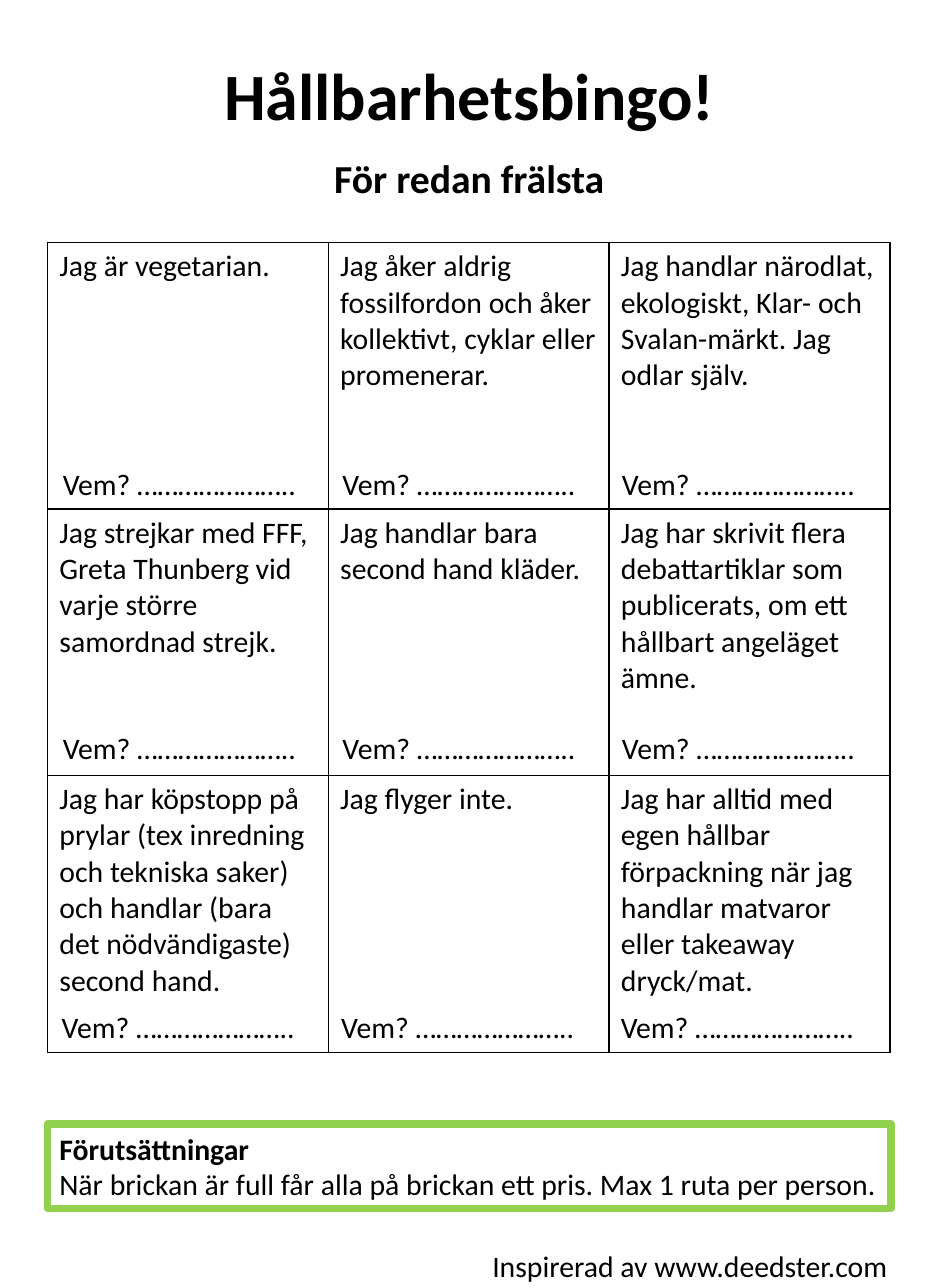
from dataclasses import dataclass

from lxml import etree
from pptx import Presentation
from pptx.dml.color import RGBColor
from pptx.enum.shapes import MSO_SHAPE
from pptx.enum.text import MSO_ANCHOR, MSO_AUTO_SIZE, PP_ALIGN
from pptx.oxml.ns import qn
from pptx.util import Pt

RECTANGLE = MSO_SHAPE.RECTANGLE
TOP, MIDDLE = MSO_ANCHOR.TOP, MSO_ANCHOR.MIDDLE
NO_FIT = MSO_AUTO_SIZE.NONE
LEFT, CENTER = PP_ALIGN.LEFT, PP_ALIGN.CENTER

EMU_PER_PX = 9144  # 100 px to the inch
TITLE_ONLY = 5


@dataclass(frozen=True)
class Theme:
    font: str = "Calibri"
    ink: str = "000000"
    frame: str = "92D050"
    title: int = 40
    subtitle: int = 24
    body: int = 18
    grid_line: int = 1
    frame_line: float = 4.5


THEME = Theme()

# Bingo card: each square is a list of paragraphs
SQUARES = [
    [
        ["Jag är vegetarian."],
        ["Jag åker aldrig fossilfordon och åker kollektivt, cyklar eller", "promenerar."],
        ["Jag handlar närodlat, ekologiskt, Klar- och Svalan-märkt. Jag odlar själv."],
    ],
    [
        ["Jag strejkar med FFF, Greta Thunberg vid varje större samordnad strejk."],
        ["Jag handlar bara second hand kläder."],
        ["Jag har skrivit flera debattartiklar som publicerats, om ett hållbart "
         "angeläget ämne."],
    ],
    [
        ["Jag har köpstopp på prylar (tex inredning och tekniska saker) och handlar "
         "(bara det nödvändigaste) second hand."],
        ["Jag flyger inte."],
        ["Jag har alltid med egen hållbar förpackning när jag handlar matvaror eller "
         "takeaway dryck/mat."],
    ],
]
WHO = "Vem? ………………….."
MARGIN, CONTENT_WIDTH = 40, 709
GRID_TOP, COLUMN_WIDTH = 204, 236
ROW_HEIGHTS = [224, 224, 233]
WHO_LINES = [(43, 387), (43, 609), (42, 843)]
WHO_STEP = 235
LINE_HEIGHT = 40


def px(length):
    return length * EMU_PER_PX


def place(shape, left, top, width, height):
    shape.left, shape.top = px(left), px(top)
    shape.width, shape.height = px(width), px(height)


def write(para, text, size=THEME.body, bold=False, align=LEFT):
    para.alignment = align
    span = para.add_run()
    span.text = text
    span.font.name = THEME.font
    span.font.size = Pt(size)
    span.font.bold = bold
    span.font.color.rgb = RGBColor.from_string(THEME.ink)


def add_text(page, left, top, width, text, wrap=True):
    box = page.shapes.add_textbox(px(left), px(top), px(width), px(LINE_HEIGHT))
    box.text_frame.word_wrap = wrap
    para = box.text_frame.paragraphs[0]
    write(para, text)
    return para


def set_tabs(para, step, count):
    tabs = etree.SubElement(para._p.get_or_add_pPr(), qn("a:tabLst"))
    for number in range(1, count + 1):
        etree.SubElement(tabs, qn("a:tab"), pos=str(px(step * number)), algn="l")


def set_borders(cell):
    properties = cell._tc.get_or_add_tcPr()
    for position, side in enumerate(("a:lnL", "a:lnR", "a:lnT", "a:lnB")):
        line = etree.Element(qn(side), w=str(Pt(THEME.grid_line)))
        fill = etree.SubElement(line, qn("a:solidFill"))
        etree.SubElement(fill, qn("a:srgbClr"), val=THEME.ink)
        properties.insert(position, line)


def add_heading(page):
    heading = page.shapes.title
    place(heading, MARGIN, 41, CONTENT_WIDTH, 135)
    frame = heading.text_frame
    frame.auto_size = NO_FIT
    frame.vertical_anchor = TOP
    write(frame.paragraphs[0], "Hållbarhetsbingo!", THEME.title, True, CENTER)
    subtitle = frame.add_paragraph()
    subtitle.space_before = Pt(12)
    write(subtitle, "För redan frälsta", THEME.subtitle, True, CENTER)


def add_bingo_card(page):
    columns = len(SQUARES[0])
    table = page.shapes.add_table(
        len(SQUARES), columns, px(MARGIN), px(GRID_TOP),
        px(COLUMN_WIDTH * columns), px(sum(ROW_HEIGHTS))).table
    table.first_row = table.horz_banding = False
    for column in table.columns:
        column.width = px(COLUMN_WIDTH)
    for row, height, squares in zip(table.rows, ROW_HEIGHTS, SQUARES):
        row.height = px(height)
        for cell, lines in zip(row.cells, squares):
            cell.fill.background()
            set_borders(cell)
            frame = cell.text_frame
            for number, line in enumerate(lines):
                write(frame.add_paragraph() if number else frame.paragraphs[0], line)


def add_who_lines(page):
    columns = len(SQUARES[0])
    for left, top in WHO_LINES:
        para = add_text(page, left, top, 706, "\t".join([WHO] * columns))
        set_tabs(para, WHO_STEP, columns - 1)


def add_conditions(page):
    box = page.shapes.add_shape(
        RECTANGLE, px(MARGIN), px(945), px(CONTENT_WIDTH), px(71))
    box.shadow.inherit = False
    box.fill.background()
    box.line.color.rgb = RGBColor.from_string(THEME.frame)
    box.line.width = Pt(THEME.frame_line)
    frame = box.text_frame
    frame.word_wrap = True
    frame.vertical_anchor = MIDDLE
    write(frame.paragraphs[0], "Förutsättningar", bold=True)
    write(frame.add_paragraph(),
          "När brickan är full får alla på brickan ett pris. Max 1 ruta per person.")


def main():
    deck = Presentation()
    deck.slide_width, deck.slide_height = px(791), px(1083)
    page = deck.slides.add_slide(deck.slide_layouts[TITLE_ONLY])

    # Heading and source
    add_heading(page)
    add_text(page, 404, 1044, 356, "Inspirerad av www.deedster.com", wrap=False)

    # Bingo card with a name line in each square
    add_bingo_card(page)
    add_who_lines(page)

    # Rules of the game
    add_conditions(page)

    deck.save("out.pptx")


if __name__ == "__main__":
    main()
